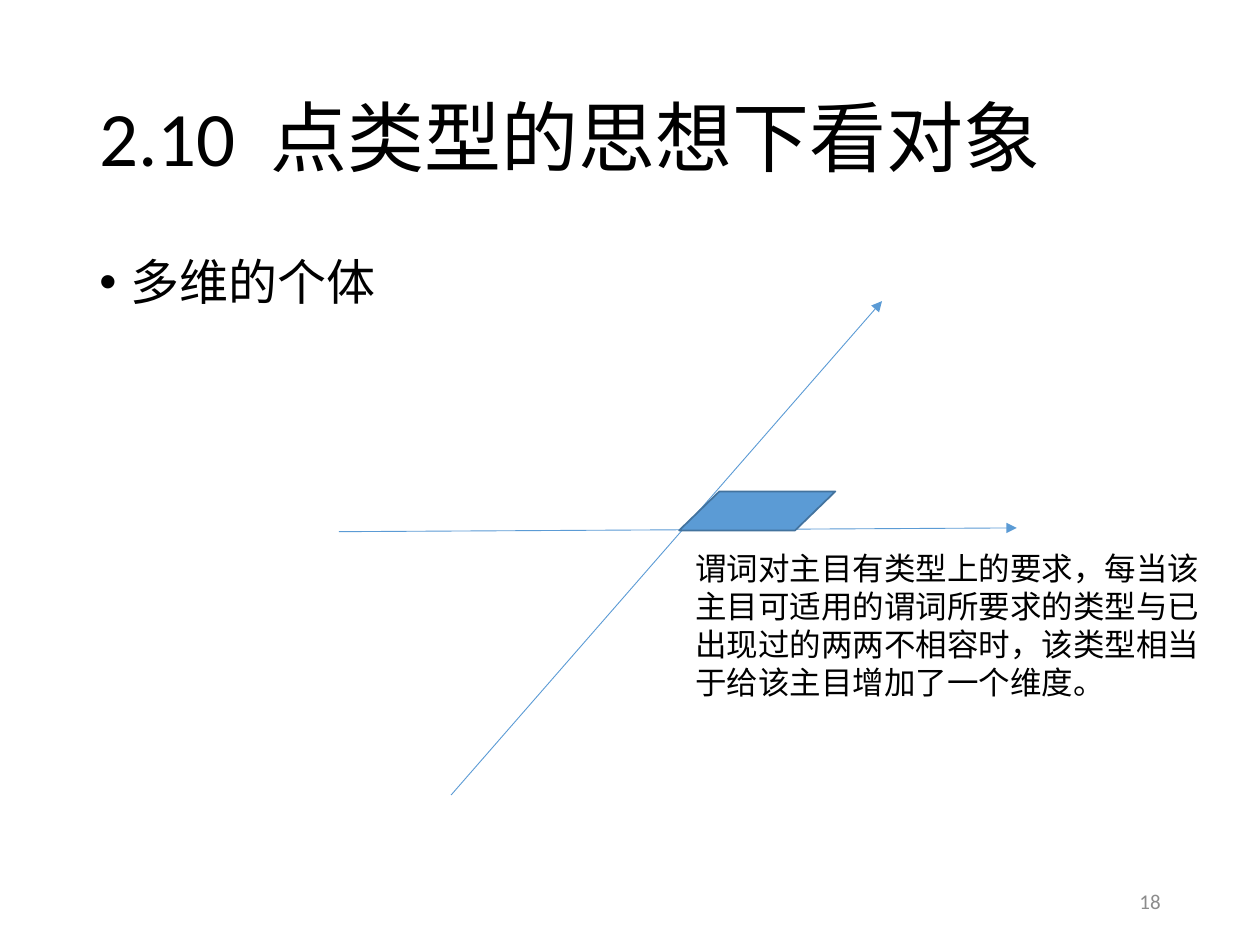
from lxml import etree
from pptx import Presentation
from pptx.dml.color import RGBColor
from pptx.enum.shapes import MSO_CONNECTOR, MSO_SHAPE
from pptx.enum.text import MSO_ANCHOR, PP_ALIGN
from pptx.oxml.ns import qn
from pptx.util import Inches, Pt

TOP, MIDDLE = MSO_ANCHOR.TOP, MSO_ANCHOR.MIDDLE
LEFT, RIGHT = PP_ALIGN.LEFT, PP_ALIGN.RIGHT

BLACK = RGBColor(0x00, 0x00, 0x00)
GREY = RGBColor(0x8C, 0x8C, 0x8C)
BLUE = RGBColor(0x5B, 0x9B, 0xD5)
DARK_BLUE = RGBColor(0x43, 0x73, 0x9E)
FONT = "Calibri"

# Content: text, box (left, top, width, height), format values
TEXTS = [
    {"text": "2.10  点类型的思想下看对象", "box": (0.69, 0.4, 8.62, 1.45),
     "size": 44, "anchor": MIDDLE, "paragraph": {"line_spacing": 0.9}},
    {"text": "多维的个体", "box": (0.69, 2, 8.62, 4.76),
     "size": 28, "bullet": "•", "paragraph": {"line_spacing": 0.9}},
    {"text": "谓词对主目有类型上的要求，每当该主目可适用的谓词所要求的类型与已"
             "出现过的两两不相容时，该类型相当于给该主目增加了一个维度。",
     "box": (5.42, 4.31, 4.21, 1.62), "size": 18},
    {"text": "18", "box": (7.06, 6.95, 2.25, 0.4), "size": 12,
     "color": GREY, "anchor": MIDDLE, "paragraph": {"alignment": RIGHT}},
]
AXES = [  # start and end points
    ((2.69, 4.22), (8.07, 4.19)),
    ((3.58, 6.31), (7, 2.39)),
]
INDIVIDUAL = {"box": (5.39, 3.9, 1.24, 0.31), "slant": 1.032}


def inches(values):
    return [Inches(value) for value in values]


def add_bullet(paragraph, character, indent=0.25):
    properties = paragraph._p.get_or_add_pPr()
    properties.set("marL", str(Inches(indent)))
    properties.set("indent", str(-Inches(indent)))
    etree.SubElement(properties, qn("a:buFont")).set("typeface", "Arial")
    etree.SubElement(properties, qn("a:buChar")).set("char", character)


def add_text(slide, item):
    frame = slide.shapes.add_textbox(*inches(item["box"])).text_frame
    frame.word_wrap = True
    frame.vertical_anchor = item.get("anchor", TOP)
    paragraph = frame.paragraphs[0]
    if "bullet" in item:
        add_bullet(paragraph, item["bullet"])
    for name, value in {"alignment": LEFT, **item.get("paragraph", {})}.items():
        setattr(paragraph, name, value)
    run = paragraph.add_run()
    run.text = item["text"]
    for name, value in {"name": FONT, "size": Pt(item["size"])}.items():
        setattr(run.font, name, value)
    run.font.color.rgb = item.get("color", BLACK)


def add_axis(slide, start, end):
    axis = slide.shapes.add_connector(MSO_CONNECTOR.STRAIGHT, *inches(start + end))
    axis.line.color.rgb = BLUE
    axis.line.width = Pt(0.5)
    etree.SubElement(axis.line._get_or_add_ln(), qn("a:tailEnd")).set("type", "triangle")
    etree.SubElement(axis._element.spPr, qn("a:effectLst"))


def add_individual(slide):
    shape = slide.shapes.add_shape(MSO_SHAPE.PARALLELOGRAM, *inches(INDIVIDUAL["box"]))
    shape.adjustments[0] = INDIVIDUAL["slant"]
    shape.shadow.inherit = False
    shape.fill.solid()
    shape.fill.fore_color.rgb = BLUE
    shape.line.color.rgb = DARK_BLUE
    shape.line.width = Pt(1)


def main():
    presentation = Presentation()
    presentation.slide_width, presentation.slide_height = inches((10, 7.5))
    slide = presentation.slides.add_slide(presentation.slide_layouts[6])

    # Title and bullet lie behind the diagram, note and number in front
    for item in TEXTS[:2]:
        add_text(slide, item)
    for start, end in AXES:
        add_axis(slide, start, end)
    add_individual(slide)
    for item in TEXTS[2:]:
        add_text(slide, item)

    presentation.save("out.pptx")


if __name__ == "__main__":
    main()
